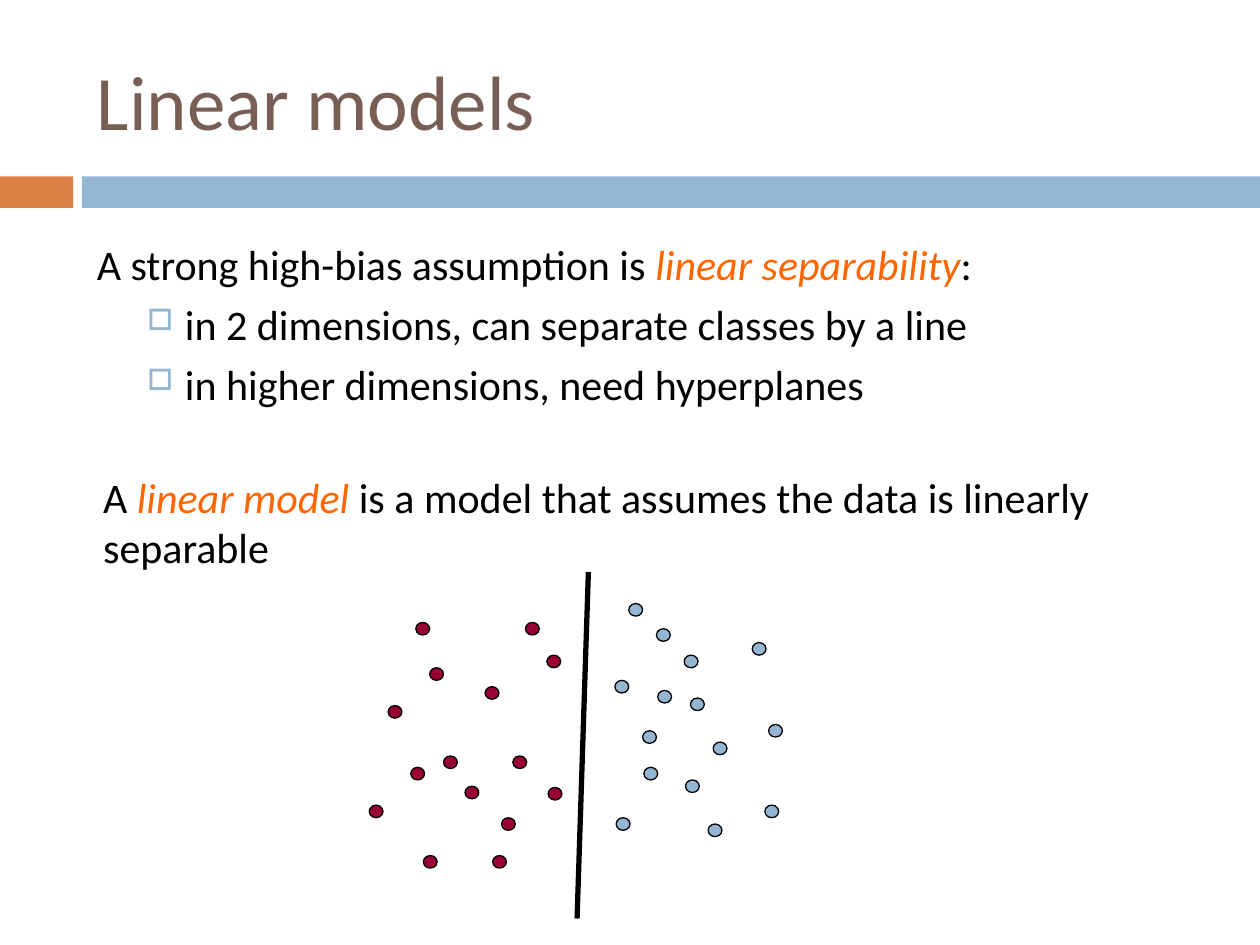
from lxml.etree import SubElement
from pptx import Presentation
from pptx.dml.color import RGBColor
from pptx.enum.shapes import MSO_CONNECTOR as Conn, MSO_SHAPE as Kind
from pptx.enum.text import MSO_ANCHOR as Anchor
from pptx.oxml.ns import qn
from pptx.util import Inches, Pt

BLACK = RGBColor(0x00, 0x00, 0x00)
BROWN = RGBColor(0x77, 0x5F, 0x55)
RUST = RGBColor(0xDD, 0x80, 0x47)
BLUE = RGBColor(0x94, 0xB6, 0xD2)
ORANGE = RGBColor(0xFF, 0x66, 0x00)
RED = RGBColor(0x99, 0x00, 0x33)

REDS = [
    (0.37, 0.4), (0.48, 0.76), (0.59, 1.46), (1.24, 0.4), (0.15, 1.06),
    (0.92, 0.91), (1.41, 0.66), (1.14, 1.46), (0.33, 1.55), (0.43, 2.25),
    (0, 1.85), (0.76, 1.7), (0.98, 2.25), (1.42, 1.71), (1.05, 1.95),
]
BLUES = [
    (1.95, 0.86), (2.06, 0.25), (2.17, 1.26), (2.28, 0.45), (3.04, 0.56),
    (2.5, 0.66), (2.18, 1.55), (2.29, 0.94), (1.96, 1.95), (2.55, 1),
    (3.17, 1.21), (2.73, 1.35), (2.51, 1.65), (3.14, 1.85), (2.69, 2),
]


def add_shape(slide, kind, box, fill, edge=None):
    shape = slide.shapes.add_shape(kind, *map(Inches, box))
    shape.shadow.inherit = False
    shape.fill.solid()
    shape.fill.fore_color.rgb = fill
    if edge is None:
        shape.line.fill.background()
    else:
        shape.line.color.rgb = edge
        shape.line.width = Pt(0.75)


def add_frame(slide, box, anchor=Anchor.TOP):
    frame = slide.shapes.add_textbox(*map(Inches, box)).text_frame
    frame.word_wrap = True
    frame.vertical_anchor = anchor
    return frame


def add_text(para, text, size=24, color=BLACK, italic=False):
    run = para.add_run()
    run.text = text
    run.font.name = "Calibri"
    run.font.size = Pt(size)
    run.font.color.rgb = color
    run.font.italic = italic


def add_bullet(para):
    props = para._p.get_or_add_pPr()
    props.set("marL", str(Inches(0.7)))
    props.set("indent", str(Inches(-0.3)))
    tint = SubElement(props, qn("a:buClr"))
    SubElement(tint, qn("a:srgbClr"), val=str(BLUE))
    SubElement(props, qn("a:buSzPct"), val="70000")
    SubElement(props, qn("a:buChar"), char="□")


def add_title(slide, box):
    frame = add_frame(slide, box, Anchor.MIDDLE)
    add_text(frame.paragraphs[0], "Linear models", size=44, color=BROWN)


def add_band(slide, box):
    left, top, width, height = box
    tab, gap = 0.58, 0.07
    start = tab + gap
    add_shape(slide, Kind.RECTANGLE, (left, top, tab, height), RUST)
    add_shape(slide, Kind.RECTANGLE,
              (left + start, top, width - start, height), BLUE)


def add_body(slide, box):
    frame = add_frame(slide, box)
    para = frame.paragraphs[0]
    add_text(para, "A strong high-bias assumption is ")
    add_text(para, "linear separability", color=ORANGE, italic=True)
    add_text(para, ":")
    for item in ("in 2 dimensions, can separate classes by a line",
                 "in higher dimensions, need hyperplanes"):
        para = frame.add_paragraph()
        para.level = 1
        para.space_before = Pt(5.5)
        add_bullet(para)
        add_text(para, item)
    para = frame.add_paragraph()
    para.space_before = Pt(36)
    para._p.get_or_add_pPr().set("marL", str(Inches(0.05)))
    add_text(para, "A ")
    add_text(para, "linear model ", color=ORANGE, italic=True)
    add_text(para, "is a model that assumes the data is linearly separable")


def add_plot(slide, box):
    left, top, width, height = box
    for spots, color in ((REDS, RED), (BLUES, BLUE)):
        for x, y in spots:
            add_shape(slide, Kind.OVAL, (left + x, top + y, 0.11, 0.1),
                      color, BLACK)
    ends = (left + 1.74, top, left + 1.65, top + height)
    line = slide.shapes.add_connector(Conn.STRAIGHT, *map(Inches, ends))
    line.line.color.rgb = BLACK
    line.line.width = Pt(3)
    SubElement(line._element.spPr, qn("a:effectLst"))


def main():
    deck = Presentation()
    deck.slide_width = Inches(10)
    deck.slide_height = Inches(7.5)
    slide = deck.slides.add_slide(deck.slide_layouts[6])
    add_band(slide, (0, 1.4, 10, 0.25))
    add_title(slide, (0.67, 0.25, 8.92, 1.08))
    add_body(slide, (0.67, 1.84, 8.5, 1.75))
    add_plot(slide, (2.93, 4.54, 3.28, 2.75))
    deck.save("out.pptx")


if __name__ == "__main__":
    main()
